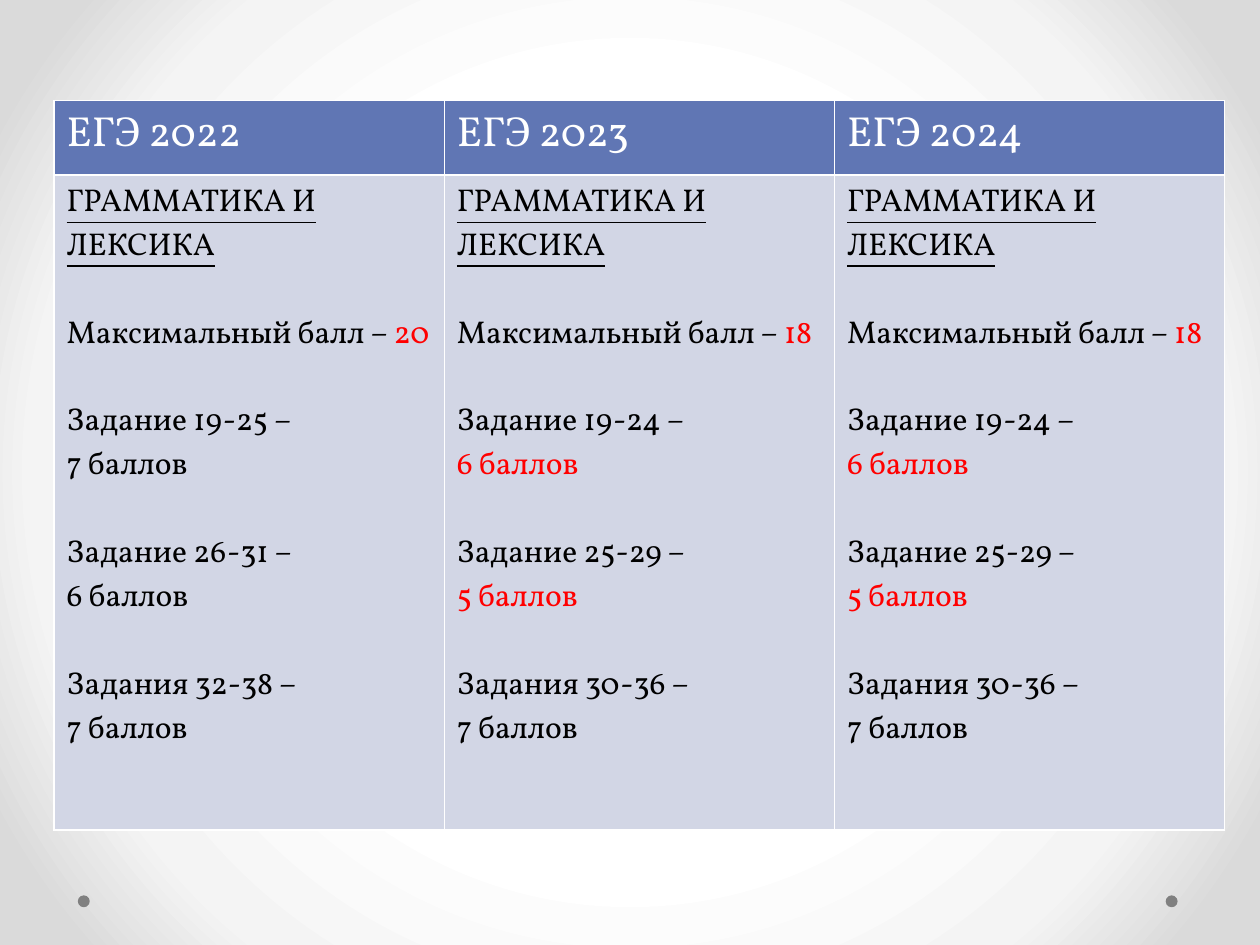
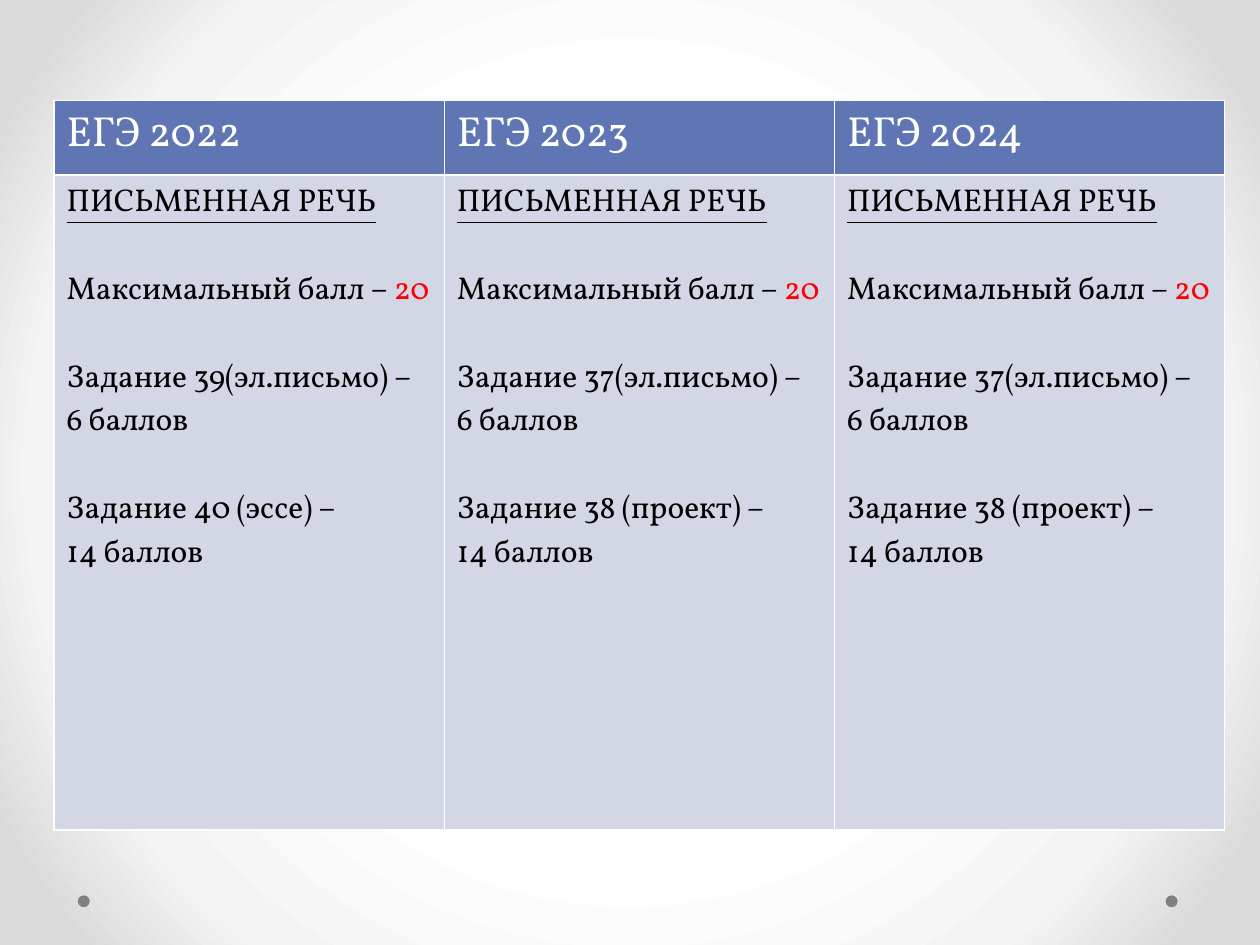
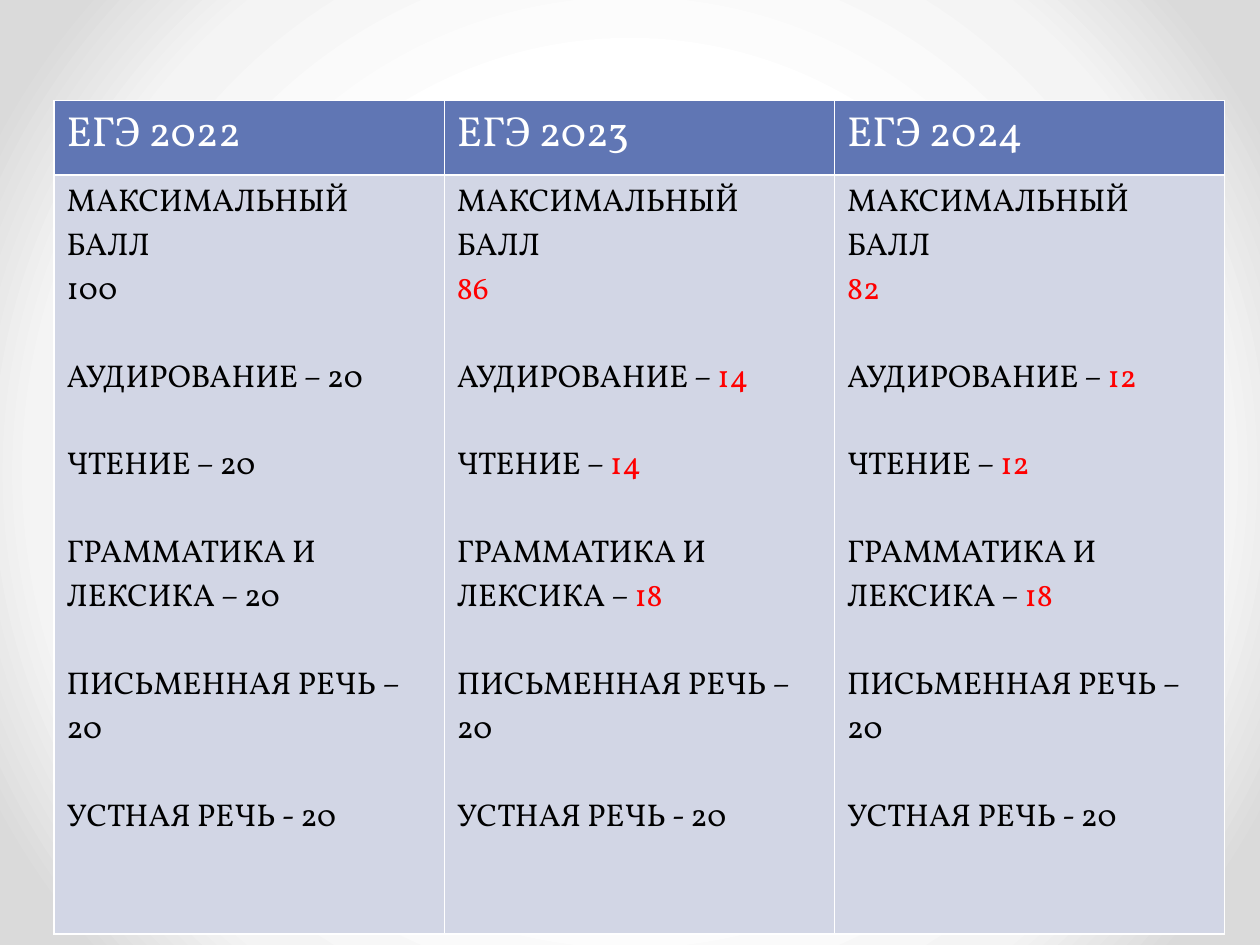
from lxml import etree
from pptx import Presentation
from pptx.dml.color import RGBColor
from pptx.enum.shapes import MSO_SHAPE
from pptx.oxml.ns import qn
from pptx.util import Cm, Pt

OVAL = MSO_SHAPE.OVAL
WHITE = RGBColor(0xFF, 0xFF, 0xFF)
BLACK = RGBColor(0x00, 0x00, 0x00)
RED = RGBColor(0xFF, 0x00, 0x00)
GRAY = RGBColor(0x80, 0x80, 0x80)
HEADER_BLUE = RGBColor(0x60, 0x76, 0xB4)
BODY_BLUE = RGBColor(0xD2, 0xD6, 0xE5)
BACKGROUND_STOPS = ((50, WHITE), (76, RGBColor(0xF4, 0xF4, 0xF4)), (92, RGBColor(0xDA, 0xDA, 0xDA)))

FONT = "Vollkorn"
HEADER_SIZE, BODY_SIZE = Pt(24), Pt(18)
GROUP_GAP = Pt(25.1)
BORDER_WIDTH = Pt(1)
BORDER_SIDES = ("a:lnL", "a:lnR", "a:lnT", "a:lnB")

TABLE_LEFT, TABLE_TOP, TABLE_WIDTH = Cm(1.09), Cm(2.03), Cm(23.6)
HEADER_HEIGHT, BODY_HEIGHT, TOTALS_HEIGHT = Cm(1.5), Cm(13.2), Cm(15.3)
DOT_LEFTS, DOT_TOP, DOT_SIZE = (Cm(1.57), Cm(23.5)), Cm(18.05), Cm(0.24)

YEARS = ("ЕГЭ 2022", "ЕГЭ 2023", "ЕГЭ 2024")
RED_MARK = "|"


def set_background(master):
    """Give the master a light radial gradient."""
    master.background.fill.gradient()
    gradient = master.element.find(".//" + qn("a:gradFill"))
    for child in list(gradient):
        gradient.remove(child)
    stops = etree.SubElement(gradient, qn("a:gsLst"))
    for percent, color in BACKGROUND_STOPS:
        stop = etree.SubElement(stops, qn("a:gs"), pos=str(percent * 1000))
        etree.SubElement(stop, qn("a:srgbClr"), val=str(color))
    circle = etree.SubElement(gradient, qn("a:path"), {"path": "circle"})
    etree.SubElement(circle, qn("a:fillToRect"), dict.fromkeys("ltrb", "50000"))


def add_dots(slide):
    """Place the two footer dots."""
    for left in DOT_LEFTS:
        dot = slide.shapes.add_shape(OVAL, left, DOT_TOP, DOT_SIZE, DOT_SIZE)
        dot.shadow.inherit = False
        dot.fill.solid()
        dot.fill.fore_color.rgb = GRAY
        dot.line.fill.background()


def style_cell(cell, color):
    """Fill a cell and draw white borders around it."""
    properties = cell._tc.get_or_add_tcPr()
    for side in BORDER_SIDES:
        line = etree.SubElement(properties, qn(side), w=str(BORDER_WIDTH))
        fill = etree.SubElement(line, qn("a:solidFill"))
        etree.SubElement(fill, qn("a:srgbClr"), val=str(WHITE))
    cell.fill.solid()
    cell.fill.fore_color.rgb = color


def add_run(paragraph, text, size, color, underline=False):
    """Append one run of text in the shared font."""
    run = paragraph.add_run()
    run.text = text
    font = run.font
    font.name, font.size, font.bold = FONT, size, False
    font.color.rgb = color
    font.underline = underline


def fill_body(cell, groups, underline_heading):
    """Write groups of lines, with the part after the mark in red."""
    frame = cell.text_frame
    for group_index, group in enumerate(groups):
        for line_index, line in enumerate(group):
            is_first = group_index == line_index == 0
            paragraph = frame.paragraphs[0] if is_first else frame.add_paragraph()
            if group_index and not line_index:
                paragraph.space_before = GROUP_GAP
            plain, _, changed = line.partition(RED_MARK)
            if plain:
                add_run(paragraph, plain, BODY_SIZE, BLACK, is_first and underline_heading)
            if changed:
                add_run(paragraph, changed, BODY_SIZE, RED)


def add_comparison(slide, columns, body_height, underline_heading):
    """Add the table that compares the exam years."""
    frame = slide.shapes.add_table(2, len(YEARS), TABLE_LEFT, TABLE_TOP,
                                   TABLE_WIDTH, HEADER_HEIGHT + body_height)
    table = frame.table
    table.first_row = table.horz_banding = False
    table.rows[0].height, table.rows[1].height = HEADER_HEIGHT, body_height
    for index, (year, groups) in enumerate(zip(YEARS, columns)):
        header, body = table.cell(0, index), table.cell(1, index)
        style_cell(header, HEADER_BLUE)
        style_cell(body, BODY_BLUE)
        add_run(header.text_frame.paragraphs[0], year, HEADER_SIZE, WHITE)
        fill_body(body, groups, underline_heading)


def section(heading, maximum, *tasks):
    """Return the groups of lines for one exam section."""
    return [[heading], ["Максимальный балл – |" + maximum],
            *([f"{task} –", points] for task, points in tasks)]


def totals(maximum, listening, reading, grammar):
    """Return the groups of lines for the total scores of one year."""
    return [["МАКСИМАЛЬНЫЙ БАЛЛ", maximum],
            [f"АУДИРОВАНИЕ – {listening}"],
            [f"ЧТЕНИЕ – {reading}"],
            [f"ГРАММАТИКА И ЛЕКСИКА – {grammar}"],
            ["ПИСЬМЕННАЯ РЕЧЬ – 20"],
            ["УСТНАЯ РЕЧЬ - 20"]]


def main():
    """Build the three slides and save them."""
    grammar_old = section("ГРАММАТИКА И ЛЕКСИКА", "20", ("Задание 19-25", "7 баллов"),
                          ("Задание 26-31", "6 баллов"), ("Задания 32-38", "7 баллов"))
    grammar_new = section("ГРАММАТИКА И ЛЕКСИКА", "18", ("Задание 19-24", "|6 баллов"),
                          ("Задание 25-29", "|5 баллов"), ("Задания 30-36", "7 баллов"))
    writing_old = section("ПИСЬМЕННАЯ РЕЧЬ", "20", ("Задание 39(эл.письмо)", "6 баллов"),
                          ("Задание 40 (эссе)", "14 баллов"))
    writing_new = section("ПИСЬМЕННАЯ РЕЧЬ", "20", ("Задание 37(эл.письмо)", "6 баллов"),
                          ("Задание 38 (проект)", "14 баллов"))
    total_scores = (totals("100", "20", "20", "20"),
                    totals("|86", "|14", "|14", "|18"),
                    totals("|82", "|12", "|12", "|18"))
    comparisons = (
        ((grammar_old, grammar_new, grammar_new), BODY_HEIGHT, True),
        ((writing_old, writing_new, writing_new), BODY_HEIGHT, True),
        (total_scores, TOTALS_HEIGHT, False),
    )

    presentation = Presentation()
    presentation.slide_width, presentation.slide_height = Cm(25.4), Cm(19.05)
    set_background(presentation.slide_master)
    blank_layout = presentation.slide_layouts[6]
    for columns, body_height, underline_heading in comparisons:
        slide = presentation.slides.add_slide(blank_layout)
        add_dots(slide)
        add_comparison(slide, columns, body_height, underline_heading)
    presentation.save("out.pptx")


if __name__ == "__main__":
    main()
